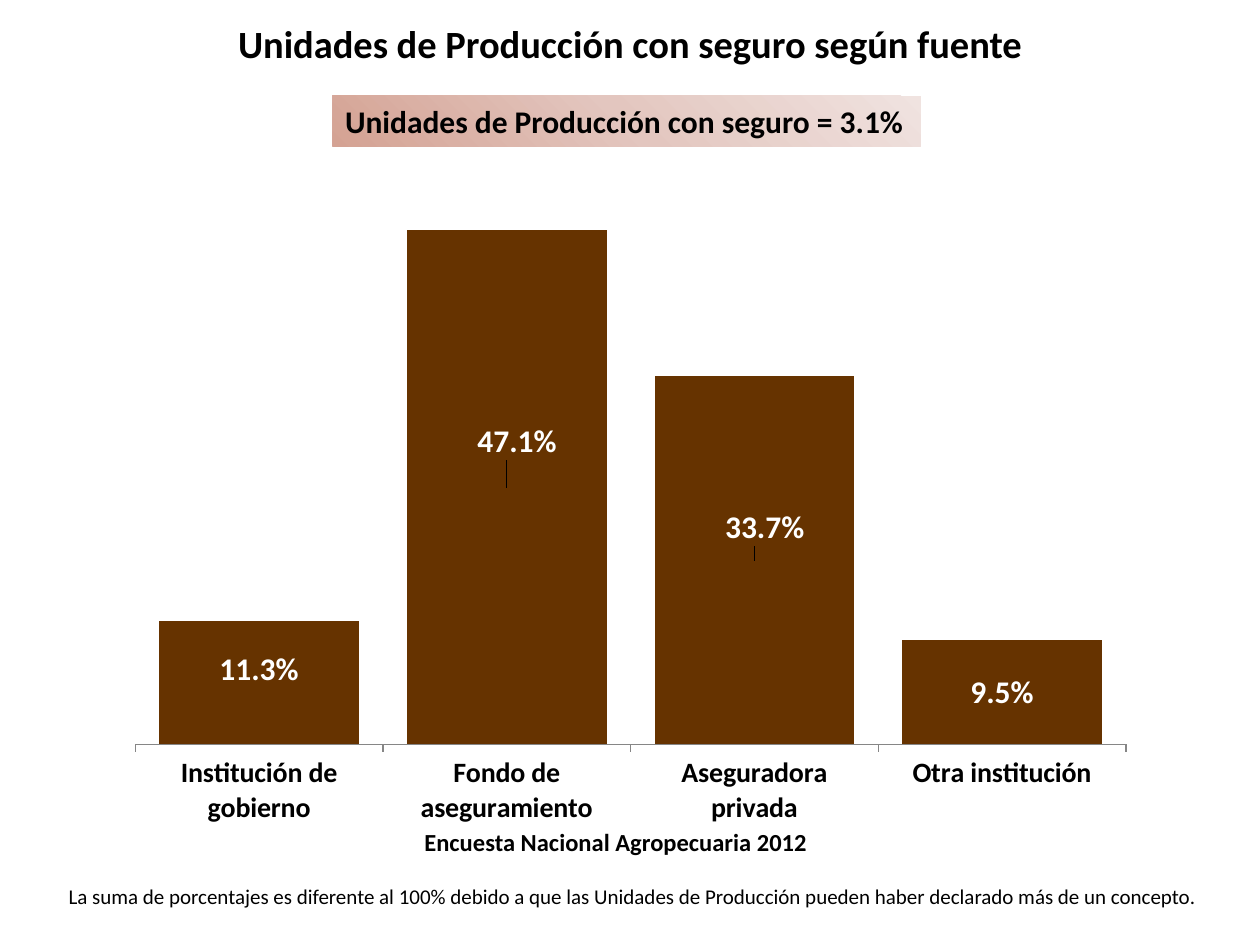
from pptx import Presentation
from pptx.chart.data import CategoryChartData
from pptx.dml.color import RGBColor
from pptx.enum.chart import XL_CHART_TYPE, XL_LABEL_POSITION, XL_TICK_MARK
from pptx.enum.shapes import MSO_SHAPE
from pptx.enum.text import MSO_ANCHOR, PP_ALIGN
from pptx.oxml import parse_xml
from pptx.oxml.ns import nsdecls
from pptx.util import Inches, Pt

COLORS = {"text": "000000", "paper": "FFFFFF", "bar": "663300", "axis": "868686"}
GRADIENT = {0: "D4A293", 50: "E3C6BF", 100: "F0E3E0"}
FONT = "Calibri"
PERCENT = "0.0%"
SHARES = {
    "Institución de gobierno": 0.113,
    "Fondo de aseguramiento": 0.471,
    "Aseguradora privada": 0.337,
    "Otra institución": 0.095,
}
LABEL_SHIFTS = [(0, -0.02), (0.01, -0.07), (0.01, -0.05), (0, 0)]


def color(name):
    return RGBColor.from_string(COLORS[name])


def style_font(font, size, bold=False, ink="text"):
    font.name = FONT
    font.size = Pt(size)
    font.bold = bold
    font.color.rgb = color(ink)


def place(shape, box):
    shape.left, shape.top, shape.width, shape.height = map(Inches, box)


def write(shape, text, size, bold=True, align=PP_ALIGN.LEFT, wrap=True):
    frame = shape.text_frame
    frame.word_wrap = wrap
    frame.vertical_anchor = MSO_ANCHOR.MIDDLE
    para = frame.paragraphs[0]
    para.alignment = align
    span = para.add_run()
    span.text = text
    style_font(span.font, size, bold)


def add_title(page, box):
    title = page.shapes.title
    place(title, box)
    write(title, "Unidades de Producción con seguro según fuente", 22, align=PP_ALIGN.CENTER)


def add_rectangle(page, box):
    rectangle = page.shapes.add_shape(MSO_SHAPE.RECTANGLE, *map(Inches, box))
    rectangle.shadow.inherit = False
    rectangle.line.fill.background()
    return rectangle


def add_banner(page, box):
    banner = add_rectangle(page, box)
    banner.fill.gradient()
    stops = "".join(
        f'<a:gs pos="{place_at * 1000}"><a:srgbClr val="{tone}"/></a:gs>'
        for place_at, tone in GRADIENT.items()
    )
    gradient = parse_xml(
        f'<a:gradFill {nsdecls("a")} rotWithShape="1"><a:gsLst>{stops}</a:gsLst>'
        '<a:path path="circle"><a:fillToRect t="100000" r="100000"/></a:path></a:gradFill>'
    )
    properties = banner.element.spPr
    properties.replace(properties.find(gradient.tag), gradient)
    write(banner, "Unidades de Producción con seguro = 3.1%", 18, wrap=False)


def manual_layout(**values):
    parts = "".join(f'<c:{key} val="{value}"/>' for key, value in values.items())
    return parse_xml(
        f'<c:layout {nsdecls("c")}><c:manualLayout>{parts}</c:manualLayout></c:layout>'
    )


def style_labels(series):
    for index, (x, y) in enumerate(LABEL_SHIFTS):
        label = series.points[index].data_label
        style_font(label.font, 18, True, "paper")
        label.position = XL_LABEL_POSITION.CENTER
    number_format = f'<c:numFmt {nsdecls("c")} formatCode="{PERCENT}" sourceLinked="0"/>'
    for element, (x, y) in zip(series._element.xpath("c:dLbls/c:dLbl"), LABEL_SHIFTS):
        element.insert(1, manual_layout(x=x, y=y))
        element.insert(2, parse_xml(number_format))
    labels = series.data_labels
    style_font(labels.font, 18, True, "paper")
    labels.number_format = PERCENT
    labels.number_format_is_linked = False
    labels.show_value = True


def add_share_chart(page, box):
    data = CategoryChartData(number_format=PERCENT)
    data.categories = list(SHARES)
    data.add_series("Series 1", list(SHARES.values()))
    chart = page.shapes.add_chart(
        XL_CHART_TYPE.COLUMN_CLUSTERED, *map(Inches, box), data
    ).chart
    chart.has_legend = False
    chart.has_title = False
    style_font(chart.font, 10)

    plot = chart.plots[0]
    plot.gap_width = 24
    plot.vary_by_categories = False
    series = plot.series[0]
    series.format.fill.solid()
    series.format.fill.fore_color.rgb = color("bar")
    style_labels(series)

    values = chart.value_axis
    values.minimum_scale, values.maximum_scale = 0, 0.5
    values.has_major_gridlines = False
    values.visible = False
    categories = chart.category_axis
    categories.major_tick_mark = XL_TICK_MARK.OUTSIDE
    categories.format.line.color.rgb = color("axis")
    style_font(categories.tick_labels.font, 16, True)

    area = chart._chartSpace.chart.plotArea
    for old in area.xpath("c:layout"):
        area.remove(old)
    area.insert(0, manual_layout(
        layoutTarget="inner", xMode="edge", yMode="edge", x=0.02, y=0.02, w=0.96, h=0.835
    ))


def add_source(page, box):
    source = page.shapes.add_textbox(*map(Inches, box))
    write(source, "Encuesta Nacional Agropecuaria 2012", 14, wrap=False)


def add_note(page, box):
    note = add_rectangle(page, box)
    note.fill.solid()
    note.fill.fore_color.rgb = color("paper")
    text = (
        " La suma de porcentajes es diferente al 100% debido a que las Unidades de "
        "Producción pueden haber declarado más de un concepto."
    )
    write(note, text, 12, bold=False, align=PP_ALIGN.CENTER)


def main():
    deck = Presentation()
    deck.slide_width, deck.slide_height = Inches(10), Inches(7.5)
    page = deck.slides.add_slide(deck.slide_layouts[5])
    add_title(page, (0, 0.11, 10, 0.47))
    add_banner(page, (2.64, 0.76, 4.67, 0.4))
    add_share_chart(page, (0.91, 1.47, 8.19, 5.19))
    add_source(page, (3.27, 6.51, 3.26, 0.34))
    add_note(page, (0.24, 6.96, 9.53, 0.3))
    deck.save("out.pptx")


if __name__ == "__main__":
    main()
